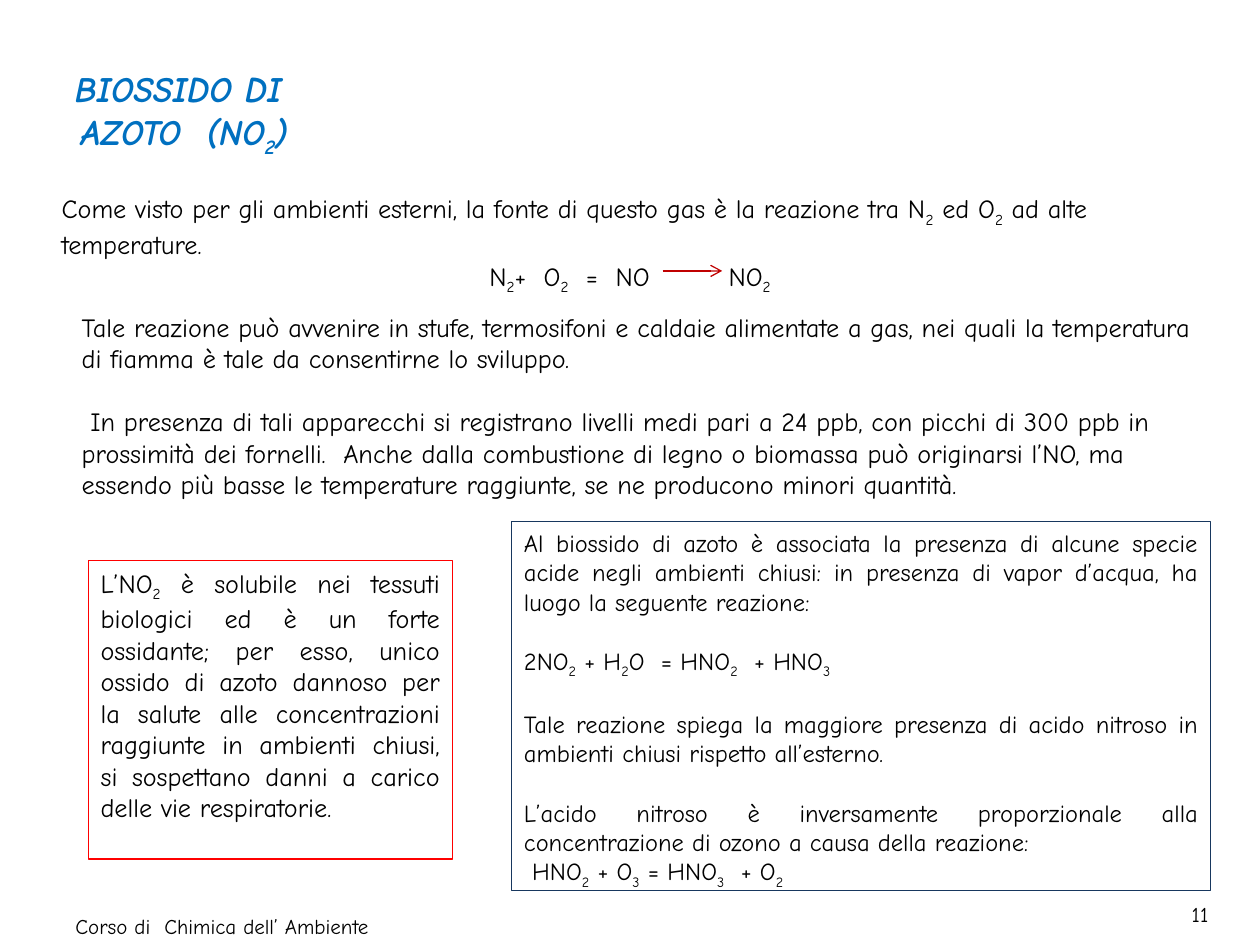
from lxml import etree
from pptx import Presentation
from pptx.dml.color import RGBColor
from pptx.enum import shapes, text
from pptx.oxml import ns
from pptx.util import Pt

COLORS = {"title": "0070C0", "text": "000000", "arrow": "C00000",
          "health": "FF0000", "acids": "17375E"}
FONT = "Comic Neue"
ALIGN = text.PP_ALIGN
WIDE_GAP = "4000"
SUBSCRIPT = "-25000"


def rgb(name):
    return RGBColor.from_string(COLORS[name])


def set_attrs(obj, values):
    for name, value in values.items():
        setattr(obj, name, value)


def add_runs(p, marked, size, color="text", **font):
    for i, part in enumerate(marked.split("_")):
        if not part:
            continue
        r = p.add_run()
        r.text = part
        set_attrs(r.font, {"name": FONT, "size": Pt(size), **font})
        r.font.color.rgb = rgb(color)
        if i % 2:
            key, value = ("spc", WIDE_GAP) if part == " " else ("baseline", SUBSCRIPT)
            r._r.get_or_add_rPr().set(key, value)


def fill_text(sp, paragraphs, size, anchor=text.MSO_ANCHOR.TOP, **font):
    tf = sp.text_frame
    set_attrs(tf, {"word_wrap": True, "vertical_anchor": anchor,
                   "auto_size": text.MSO_AUTO_SIZE.NONE})
    for i, (marked, align, before) in enumerate(paragraphs):
        p = tf.add_paragraph() if i else tf.paragraphs[0]
        set_attrs(p, {"alignment": align, "space_before": Pt(before)})
        add_runs(p, marked, size, **font)


def add_title(s, x, y, w, h):
    sp = s.shapes.title
    set_attrs(sp, {"left": Pt(x), "top": Pt(y), "width": Pt(w), "height": Pt(h)})
    lines = [("BIOSSIDO DI ", ALIGN.CENTER, 0), ("AZOTO  (NO_2_)", ALIGN.CENTER, 0)]
    fill_text(sp, lines, 20.4, text.MSO_ANCHOR.MIDDLE,
              color="title", bold=True, italic=True)


def add_note(s, x, y, w, h, paragraphs, size):
    sp = s.shapes.add_textbox(Pt(x), Pt(y), Pt(w), Pt(h))
    fill_text(sp, paragraphs, size)


def add_source(s, x, y, w, h):
    add_note(s, x, y, w, h, [
        ("Come visto per gli ambienti esterni, la fonte di questo gas è la reazione "
         "tra N_2_ ed O_2_ ad alte temperature.", ALIGN.LEFT, 0),
        ("N_2_+  O_2_  =  NO_ _NO_2_", ALIGN.CENTER, 0),
    ], 15)
    ax, ay = x + 350.6, y + 48.2
    arrow = s.shapes.add_connector(shapes.MSO_CONNECTOR.STRAIGHT,
                                   Pt(ax), Pt(ay), Pt(ax + 34), Pt(ay))
    arrow.line.color.rgb = rgb("arrow")
    arrow.line.width = Pt(0.75)
    etree.SubElement(arrow.line._get_or_add_ln(), ns.qn("a:tailEnd"), type="arrow")
    etree.SubElement(arrow._element.spPr, ns.qn("a:effectLst"))


def add_frame(s, x, y, w, h, paragraphs, size, color):
    sp = s.shapes.add_shape(shapes.MSO_SHAPE.RECTANGLE, Pt(x), Pt(y), Pt(w), Pt(h))
    sp.shadow.inherit = False
    sp.fill.background()
    sp.line.color.rgb = rgb(color)
    sp.line.width = Pt(0.75)
    fill_text(sp, paragraphs, size)


def main():
    prs = Presentation()
    set_attrs(prs, {"slide_width": Pt(720), "slide_height": Pt(540)})
    s = prs.slides.add_slide(prs.slide_layouts[5])

    add_title(s, 22.3, 16.6, 166.3, 95.8)
    add_source(s, 28.1, 106.6, 663.8, 61.9)
    add_note(s, 39.6, 174.2, 652.3, 116.6, [
        ("Tale reazione può avvenire in stufe, termosifoni e caldaie alimentate a gas, "
         "nei quali la temperatura di fiamma è tale da consentirne lo sviluppo.",
         ALIGN.LEFT, 0),
        (" In presenza di tali apparecchi si registrano livelli medi pari a 24 ppb, con "
         "picchi di 300 ppb in prossimità dei fornelli.  Anche dalla combustione di legno "
         "o biomassa può originarsi l’NO, ma essendo più basse le temperature raggiunte, "
         "se ne producono minori quantità.", ALIGN.LEFT, 18),
    ], 15)
    add_frame(s, 50.4, 320.4, 208.1, 170.6, [
        ("L’NO_2_ è solubile nei tessuti biologici ed è un forte ossidante; per esso, "
         "unico ossido di azoto dannoso per la salute alle concentrazioni raggiunte in "
         "ambienti chiusi, si sospettano danni a carico delle vie respiratorie.",
         ALIGN.JUSTIFY, 0),
    ], 15, "health")
    add_frame(s, 292.3, 298.1, 399.6, 211, [
        ("Al biossido di azoto è associata la presenza di alcune specie acide negli "
         "ambienti chiusi: in presenza di vapor d’acqua, ha luogo la seguente reazione:",
         ALIGN.JUSTIFY, 0),
        ("2NO_2_ + H_2_O  = HNO_2_  + HNO_3_", ALIGN.JUSTIFY, 17),
        ("Tale reazione spiega la maggiore presenza di acido nitroso in ambienti chiusi "
         "rispetto all’esterno.", ALIGN.JUSTIFY, 17),
        ("L’acido nitroso è inversamente proporzionale alla concentrazione di ozono a "
         "causa della reazione:", ALIGN.JUSTIFY, 17),
        (" HNO_2_ + O_3_ = HNO_3_  + O_2_", ALIGN.JUSTIFY, 0),
    ], 14, "acids")
    add_note(s, 660.2, 511.9, 37.4, 24.5, [("11", ALIGN.RIGHT, 0)], 12)
    add_note(s, 36, 518.4, 221.8, 24.5,
             [("Corso di  Chimica dell’ Ambiente", ALIGN.LEFT, 0)], 12)
    prs.save("out.pptx")


if __name__ == "__main__":
    main()
